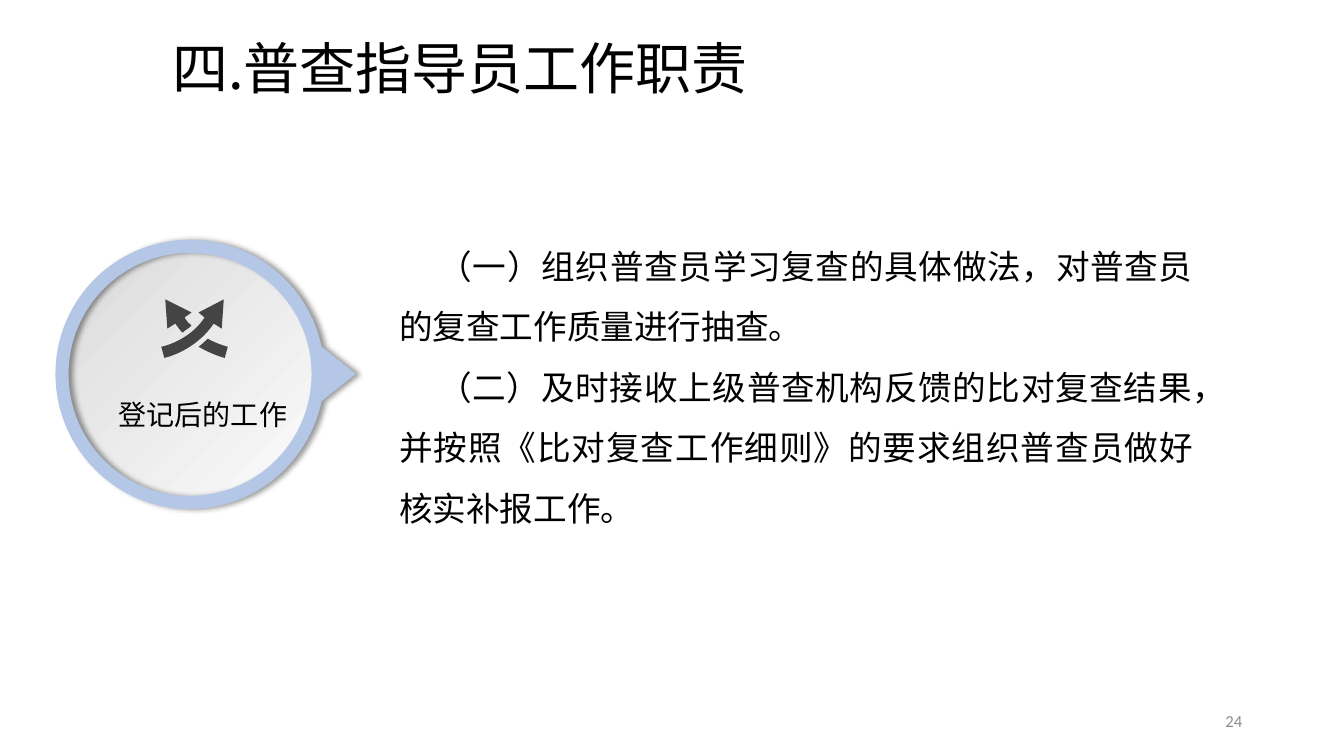
"""Build the slide on the duties of a census instructor."""
from lxml import etree
from pptx import Presentation
from pptx.dml.color import RGBColor
from pptx.enum.text import MSO_ANCHOR, PP_ALIGN
from pptx.oxml.ns import qn
from pptx.util import Inches, Pt

LEFT, RIGHT, JUSTIFY = PP_ALIGN.LEFT, PP_ALIGN.RIGHT, PP_ALIGN.JUSTIFY
TOP, MIDDLE, BOTTOM = MSO_ANCHOR.TOP, MSO_ANCHOR.MIDDLE, MSO_ANCHOR.BOTTOM
SANS = "Noto Sans CJK SC"
color = RGBColor.from_string

deck = Presentation()
deck.slide_width, deck.slide_height = Inches(13.33), Inches(7.5)
slide = deck.slides.add_slide(deck.slide_layouts[6])


def write(text, box, size, font=SANS, fill="000000", align=LEFT,
          anchor=TOP, space=1.0, indent=0, foot=0.05):
    frame = slide.shapes.add_textbox(*map(Inches, box)).text_frame
    frame.word_wrap = True
    frame.vertical_anchor = anchor
    frame.margin_bottom = Inches(foot)
    frame.text = text
    for para in frame.paragraphs:
        para.alignment = align
        para.line_spacing = space
        props = para._p.get_or_add_pPr()
        props.set("marL", "0")
        props.set("indent", str(Inches(indent)))
        run = para.runs[0]
        run.font.size = Pt(size)
        run.font.name = font
        run.font.color.rgb = color(fill)
        etree.SubElement(run._r.get_or_add_rPr(), qn("a:ea"), typeface=font)


def draw(loops, fill):
    """Draw closed loops; a step of six numbers is a cubic curve."""
    pen = None
    for start, *steps in loops:
        dot = tuple(map(Inches, start))
        if pen is None:
            pen = slide.shapes.build_freeform(*dot, scale=1.0)
        else:
            pen.move_to(*dot)
        pen.add_line_segments([tuple(map(Inches, step[-2:])) for step in steps],
                              close=True)
    shape = pen.convert_to_shape()
    marks = [node for node in shape._element.iter(qn("a:moveTo"), qn("a:lnTo"))]
    for node, step in zip(marks, [step for loop in loops for step in loop]):
        if len(step) == 6:
            node.tag = qn("a:cubicBezTo")
            for at in (0, 2):
                knob = etree.Element(qn("a:pt"), x=str(Inches(step[at]) - shape.left),
                                     y=str(Inches(step[at + 1]) - shape.top))
                node.insert(at // 2, knob)
    shape.shadow.inherit = False
    shape.fill.solid()
    shape.fill.fore_color.rgb = color(fill)
    shape.line.fill.background()
    return shape


write("24", (9.42, 6.95, 3, 0.4), 12, font="Calibri", fill="8C8C8C",
      align=RIGHT, anchor=MIDDLE)
write("四.普查指导员工作职责", (1.61, -0.3, 11.5, 1.31), 40,
      anchor=BOTTOM, space=0.9, foot=0)

drop = [(3.53, 3.71), (3.19, 3.44),
        (3.06, 2.83, 2.53, 2.38, 1.88, 2.38),
        (1.15, 2.38, 0.55, 2.97, 0.55, 3.71),
        (0.55, 4.45, 1.15, 5.05, 1.88, 5.05),
        (2.53, 5.05, 3.06, 4.59, 3.19, 3.98)]
hole = [(1.88, 4.92),
        (1.22, 4.92, 0.68, 4.38, 0.68, 3.71),
        (0.68, 3.05, 1.22, 2.51, 1.88, 2.51),
        (2.55, 2.51, 3.09, 3.05, 3.09, 3.71),
        (3.09, 4.38, 2.55, 4.92, 1.88, 4.92)]

disc = draw([drop], "FFFFFF")
disc.fill.gradient()
disc.fill.gradient_angle = 315
for stop, tone, place in zip(disc.fill.gradient_stops, ("D9D9DA", "FFFFFF"), (0, 1)):
    stop.color.rgb = color(tone)
    stop.position = place
disc.line.color.rgb = color("FFFFFF")
disc.line.width = Pt(1.5)

ring = draw([drop, hole], "B4C7E7")
effect = ring._element.spPr.find(qn("a:effectLst"))
shade = etree.SubElement(effect, qn("a:outerShdw"), blurRad=str(Pt(4)),
                         dist=str(Pt(3)), dir="0", algn="l", rotWithShape="0")
tint = etree.SubElement(shade, qn("a:srgbClr"), val="000000")
etree.SubElement(tint, qn("a:alpha"), val="40000")

west = [(1.74, 3.21), (1.76, 3.24, 1.78, 3.27, 1.81, 3.3),
        (1.83, 3.28, 1.87, 3.26, 1.9, 3.23),
        (1.87, 3.21, 1.85, 3.18, 1.83, 3.15),
        (1.9, 3.1), (1.64, 2.97), (1.66, 3.26)]
east = [(2.12, 3.21), (2.2, 3.26), (2.22, 2.97), (1.97, 3.1), (2.03, 3.15),
        (1.88, 3.38, 1.61, 3.44, 1.6, 3.44), (1.63, 3.55),
        (1.64, 3.55, 1.94, 3.48, 2.12, 3.21)]
tail = [(2.06, 3.36), (2.03, 3.39, 2, 3.42, 1.97, 3.44),
        (2.11, 3.52, 2.22, 3.55, 2.23, 3.55), (2.26, 3.44),
        (2.26, 3.44, 2.17, 3.42, 2.06, 3.36)]
draw([west, east, tail], "444444")

write("登记后的工作", (1.08, 3.89, 1.95, 0.44), 20, font="Calibri")
write("（一）组织普查员学习复查的具体做法，对普查员的复查工作质量进行抽查。\n"
      "（二）及时接收上级普查机构反馈的比对复查结果，并按照《比对复查工作细则》"
      "的要求组织普查员做好核实补报工作。",
      (3.86, 2.19, 8.07, 3.13), 24, align=JUSTIFY, space=1.5, indent=0.39)

deck.save("out.pptx")
